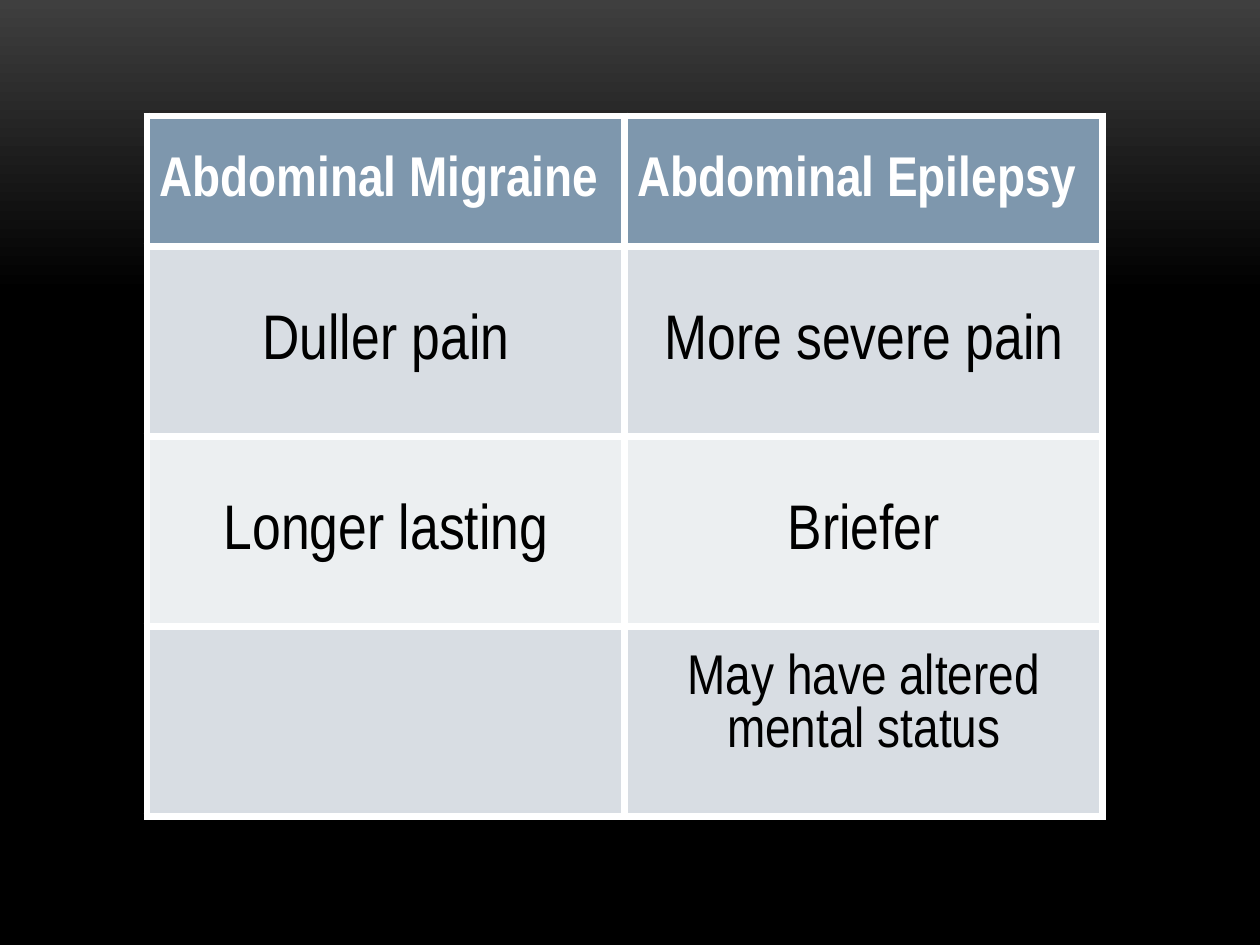
from dataclasses import dataclass

from lxml import etree
from pptx import Presentation
from pptx import util as u
from pptx.dml.color import RGBColor
from pptx.enum import text
from pptx.oxml import ns

EMU_PER_PX = 914400 / 126
FONT = "Arial Narrow"
COLORS = {
    "glow": "3F3F3F",
    "black": "000000",
    "white": "FFFFFF",
    "header": "7E97AD",
    "band": "D8DDE3",
    "light": "ECEFF1",
}


@dataclass(frozen=True)
class RowStyle:
    labels: tuple[str, str]
    height: int
    fill: str
    size: int = 36
    color: str = "black"
    bold: bool = False
    align: text.PP_ALIGN = text.PP_ALIGN.CENTER
    anchor: text.MSO_ANCHOR = text.MSO_ANCHOR.BOTTOM
    bottom: int = 64


ROWS = (
    RowStyle(("Abdominal Migraine", "Abdominal Epilepsy"), 131, "header", size=32,
             color="white", bold=True, align=text.PP_ALIGN.LEFT,
             anchor=text.MSO_ANCHOR.MIDDLE, bottom=6),
    RowStyle(("Duller pain", "More severe pain"), 190, "band"),
    RowStyle(("Longer lasting", "Briefer"), 190, "light"),
    RowStyle(("", "May have altered mental status"), 190, "band", size=32, bottom=58),
)


def px(length: int) -> u.Emu:
    return u.Emu(round(length * EMU_PER_PX))


def rgb(name: str) -> RGBColor:
    return RGBColor.from_string(COLORS[name])


def write_text(frame, words: str, *, size: int, color: str, bold: bool,
               align: text.PP_ALIGN) -> None:
    para = frame.paragraphs[0]
    para.alignment = align
    para.line_spacing = u.Pt(30 * size / 32)
    span = para.add_run()
    span.text = words
    span.font.name = FONT
    span.font.size = u.Pt(size)
    span.font.bold = bold
    span.font.color.rgb = rgb(color)


def set_borders(cell, color: str, width: float) -> None:
    properties = cell._tc.get_or_add_tcPr()
    for index, side in enumerate(("lnL", "lnR", "lnT", "lnB")):
        line = etree.Element(ns.qn(f"a:{side}"), w=str(u.Pt(width)))
        fill = etree.SubElement(line, ns.qn("a:solidFill"))
        etree.SubElement(fill, ns.qn("a:srgbClr"), val=COLORS[color])
        properties.insert(index, line)


def draw_cell(cell, words: str, style: RowStyle) -> None:
    cell.fill.solid()
    cell.fill.fore_color.rgb = rgb(style.fill)
    set_borders(cell, "white", 4.5)
    if words:
        cell.vertical_anchor = style.anchor
        cell.margin_bottom = px(style.bottom)
        write_text(cell.text_frame, words, size=style.size, color=style.color,
                   bold=style.bold, align=style.align)


def draw_table(page, left: int, top: int, column_width: int) -> None:
    columns = len(ROWS[0].labels)
    height = sum(style.height for style in ROWS)
    table = page.shapes.add_table(len(ROWS), columns, px(left), px(top),
                                  px(column_width * columns), px(height)).table
    table.horz_banding = False
    for column in table.columns:
        column.width = px(column_width)
    for row, style in zip(table.rows, ROWS):
        row.height = px(style.height)
        for cell, words in zip(row.cells, style.labels):
            draw_cell(cell, words, style)


def paint_background(page) -> None:
    fill = page.background.fill
    fill.gradient()
    fill.gradient_angle = 270
    for stop, color, position in zip(fill.gradient_stops, ("glow", "black"), (0, 0.31)):
        stop.color.rgb = rgb(color)
        stop.position = position


def main() -> None:
    deck = Presentation()
    deck.slide_width, deck.slide_height = px(1260), px(945)
    page = deck.slides.add_slide(deck.slide_layouts[6])
    paint_background(page)
    draw_table(page, left=147, top=116, column_width=478)
    deck.save("out.pptx")


if __name__ == "__main__":
    main()
